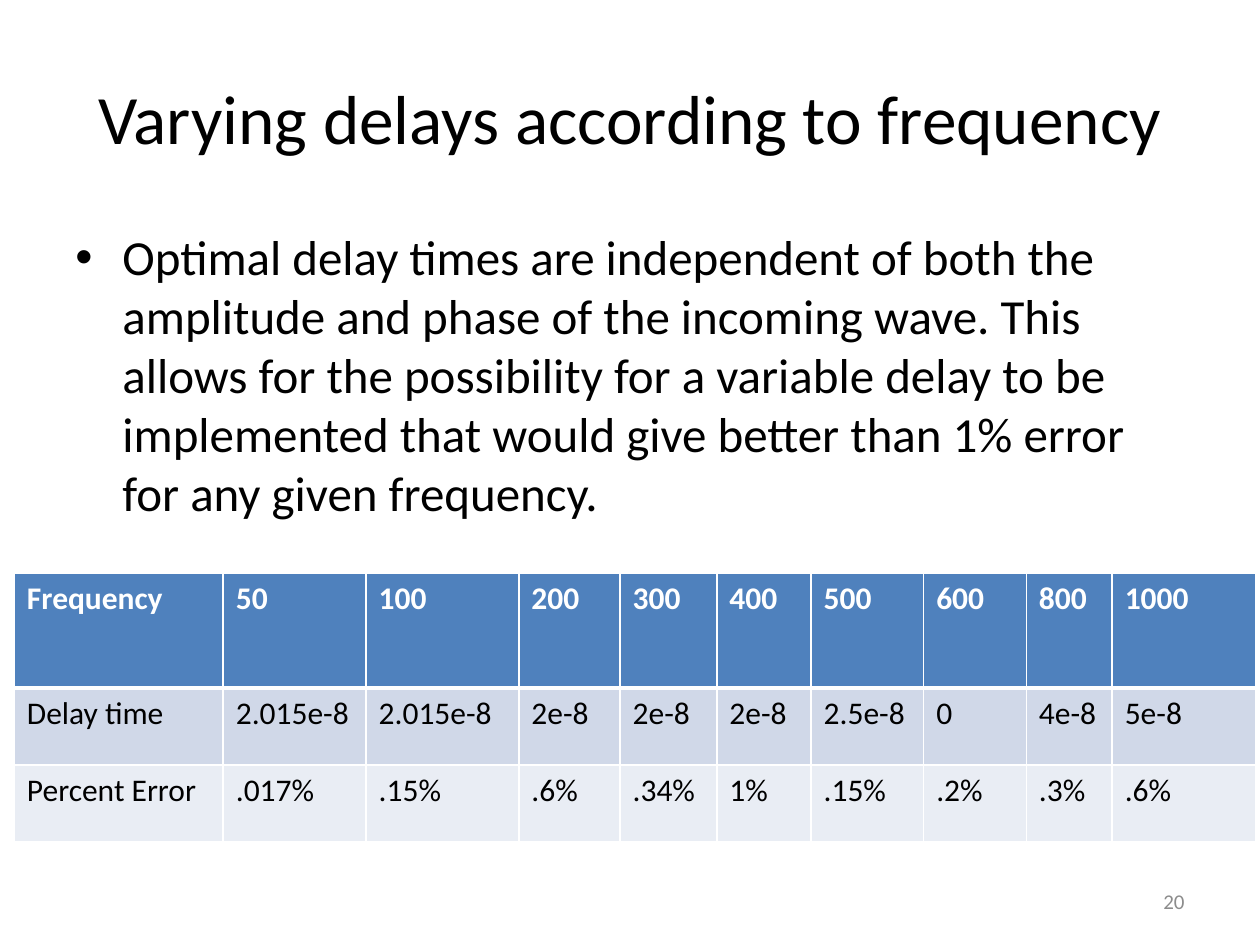
import dataclasses

import lxml.etree
import pptx
import pptx.dml.color
import pptx.enum.text
import pptx.oxml.ns
import pptx.util

Cm = pptx.util.Cm
Pt = pptx.util.Pt
Align = pptx.enum.text.PP_ALIGN
Anchor = pptx.enum.text.MSO_ANCHOR
qn = pptx.oxml.ns.qn


@dataclasses.dataclass(frozen=True)
class Theme:
    font: str = "Calibri"
    ink: str = "000000"
    white: str = "FFFFFF"
    muted: str = "8C8C8C"
    row_fills: tuple = ("4F81BD", "D0D8E8", "E9EDF4")
    title: float = 39.6
    body: float = 28
    table: float = 18
    number: float = 12
    border: float = 1
    header_rule: float = 3


theme = Theme()


def set_text(para, text, size, color, bold=False):
    para.text = text
    para.font.name = theme.font
    para.font.size = Pt(size)
    para.font.bold = bold
    para.font.color.rgb = pptx.dml.color.RGBColor.from_string(color)


def add_text(page, place, text, size, color, align, anchor):
    box = page.shapes.add_textbox(*map(Cm, place))
    box.text_frame.word_wrap = True
    box.text_frame.vertical_anchor = anchor
    para = box.text_frame.paragraphs[0]
    set_text(para, text, size, color)
    para.alignment = align
    return para


deck = pptx.Presentation()
deck.slide_width = Cm(25.4)
deck.slide_height = Cm(19.05)
page = deck.slides.add_slide(deck.slide_layouts[6])

add_text(page, (1.27, 0.76, 22.86, 3.18), "Varying delays according to frequency",
         theme.title, theme.ink, Align.CENTER, Anchor.MIDDLE)

statement = add_text(
    page, (1.27, 4.45, 22.86, 4.52),
    "Optimal delay times are independent of both the amplitude and phase of the "
    "incoming wave. This allows for the possibility for a variable delay to be "
    "implemented that would give better than 1% error for any given frequency.",
    theme.body, theme.ink, Align.LEFT, Anchor.TOP)
properties = statement._p.get_or_add_pPr()
properties.set("marL", str(Cm(0.95)))
properties.set("indent", str(-Cm(0.95)))
lxml.etree.SubElement(properties, qn("a:buFont"), typeface="Arial")
lxml.etree.SubElement(properties, qn("a:buChar"), char="•")

rows = [
    ["Frequency", "50", "100", "200", "300", "400", "500", "600", "800", "1000"],
    ["Delay time", "2.015e-8", "2.015e-8", "2e-8", "2e-8", "2e-8", "2.5e-8", "0", "4e-8", "5e-8"],
    ["Percent Error", ".017%", ".15%", ".6%", ".34%", "1%", ".15%", ".2%", ".3%", ".6%"],
]
column_widths = [4.21, 2.88, 3.08, 2.04, 1.95, 1.9, 2.27, 2.07, 1.73, 2.89]
row_heights = [2.31, 1.55, 1.55]

table = page.shapes.add_table(
    len(rows), len(column_widths), Cm(0.29), Cm(11.56),
    Cm(sum(column_widths)), Cm(sum(row_heights))).table
for column, width in zip(table.columns, column_widths):
    column.width = Cm(width)
for row, height in zip(table.rows, row_heights):
    row.height = Cm(height)

for row_index, values in enumerate(rows):
    header = row_index == 0
    widths = {"L": theme.border, "R": theme.border,
              "T": theme.header_rule if row_index == 1 else theme.border,
              "B": theme.header_rule if header else theme.border}
    for column_index, value in enumerate(values):
        cell = table.cell(row_index, column_index)
        set_text(cell.text_frame.paragraphs[0], value, theme.table,
                 theme.white if header else theme.ink, header)
        cell_properties = cell._tc.get_or_add_tcPr()
        for side, width in widths.items():
            line = lxml.etree.SubElement(cell_properties, qn(f"a:ln{side}"), w=str(Pt(width)))
            fill = lxml.etree.SubElement(line, qn("a:solidFill"))
            lxml.etree.SubElement(fill, qn("a:srgbClr"), val=theme.white)
        cell.fill.solid()
        cell.fill.fore_color.rgb = pptx.dml.color.RGBColor.from_string(theme.row_fills[row_index])

add_text(page, (18.21, 17.65, 5.92, 1.02), "20",
         theme.number, theme.muted, Align.RIGHT, Anchor.MIDDLE)

deck.save("out.pptx")
